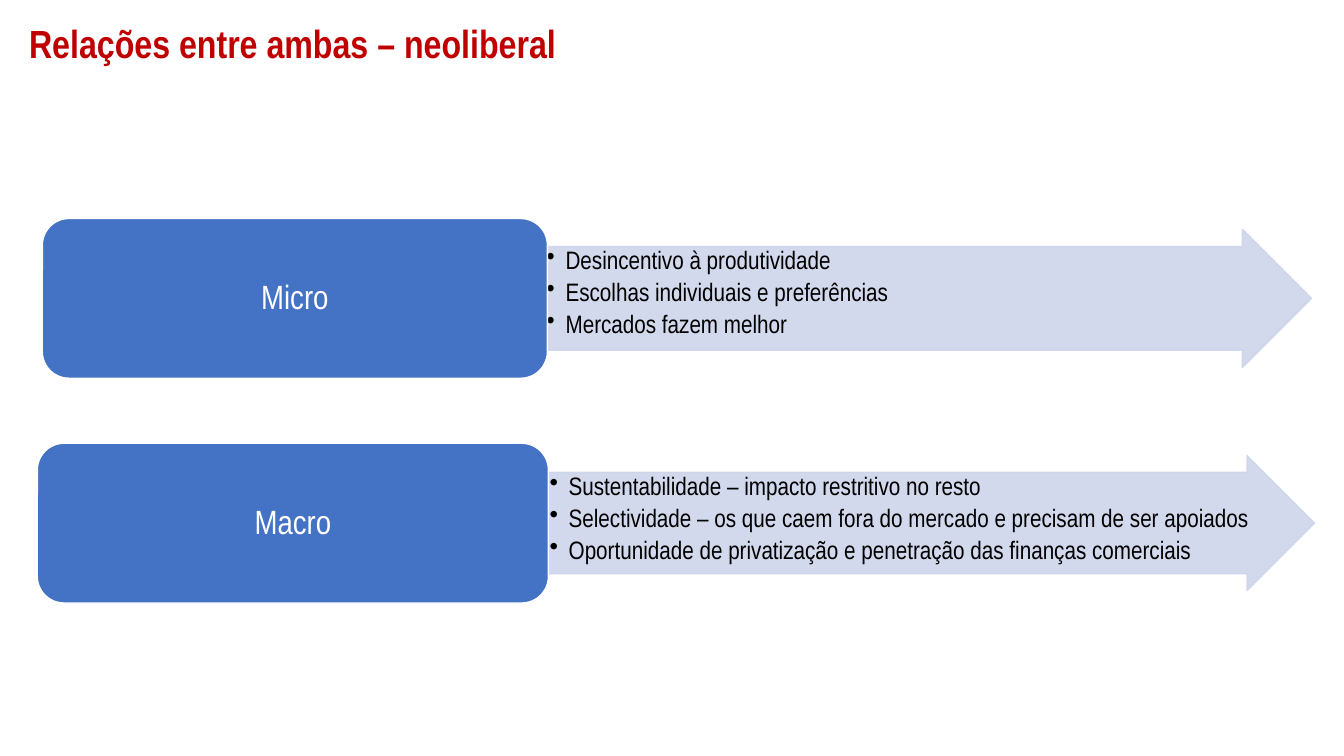
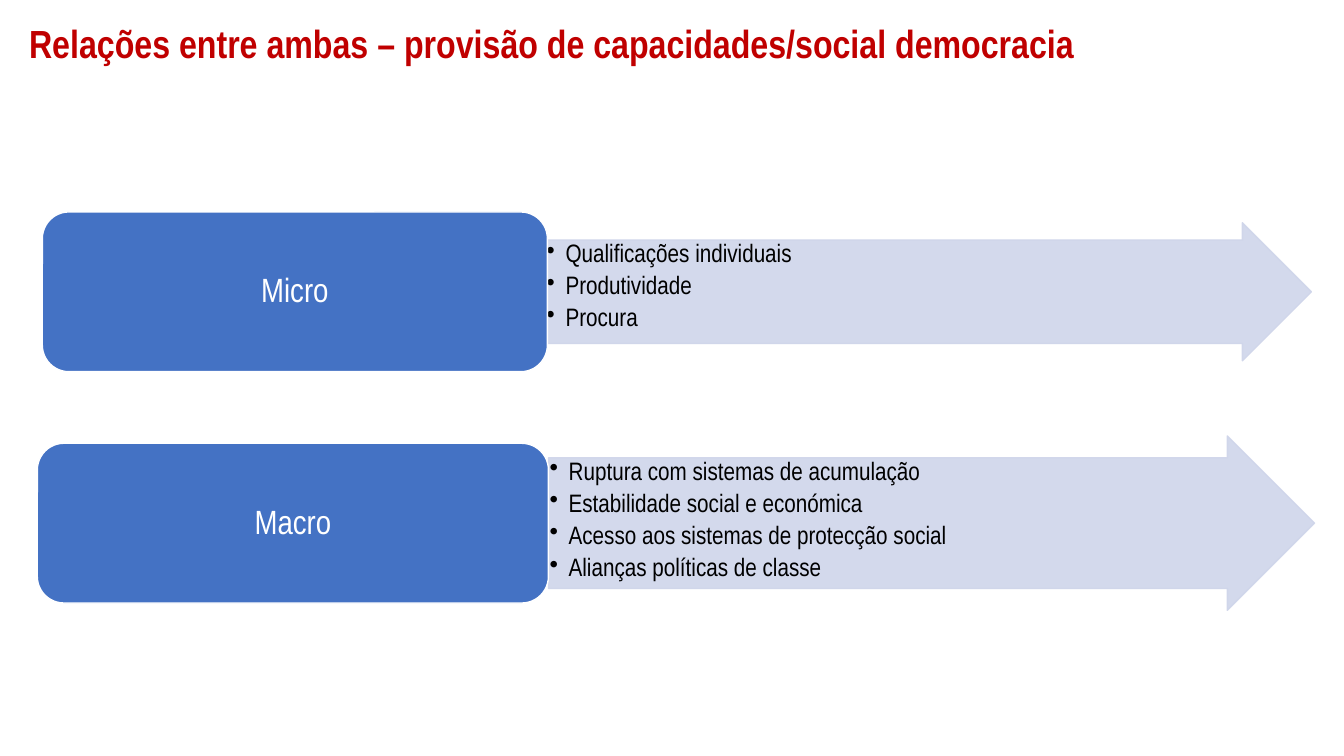
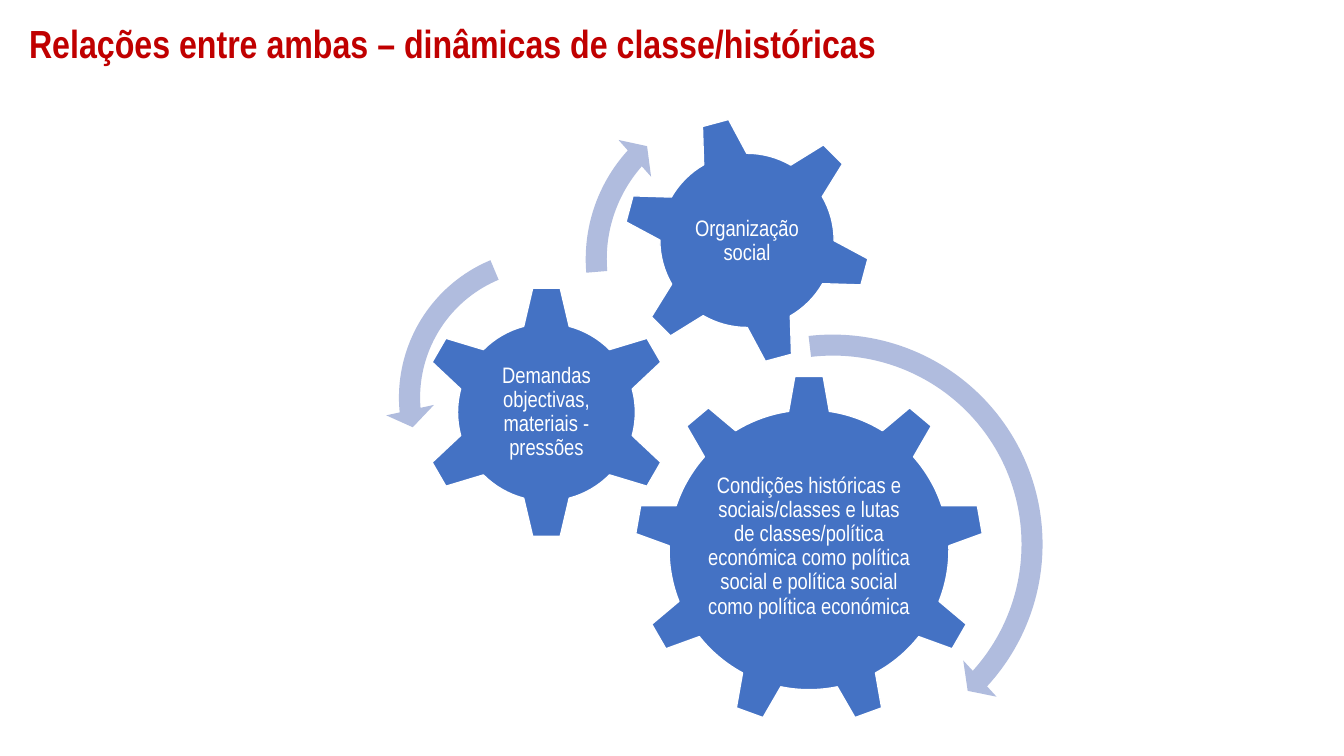
from lxml import etree
from pptx import Presentation
from pptx import util as u
from pptx.dml.color import RGBColor
from pptx.enum import shapes, text
from pptx.oxml.ns import qn

WIDTH, HEIGHT = u.Inches(13.33), u.Inches(7.5)
RATIO = HEIGHT / WIDTH
FONT = "Arial Narrow"
RED = RGBColor(0xC0, 0x00, 0x00)
BLUE = RGBColor(0x44, 0x72, 0xC4)
PALE_BLUE = RGBColor(0xCF, 0xD5, 0xEA)
SOFT_BLUE = RGBColor(0xB0, 0xBC, 0xDE)
WHITE = RGBColor(0xFF, 0xFF, 0xFF)
BLACK = RGBColor(0x00, 0x00, 0x00)
KIND = shapes.MSO_SHAPE
ALIGN = text.PP_ALIGN
ANCHOR = text.MSO_ANCHOR


def add_box(slide, kind, center, middle, width, height, fill=None, line=None):
    """Add a shape, or a text box if kind is None; lengths are percent of the slide."""
    frame = [int(share / 100 * side) for share, side in (
        (center - width / 2, WIDTH), (middle - height / 2, HEIGHT),
        (width, WIDTH), (height, HEIGHT))]
    if kind is None:
        return slide.shapes.add_textbox(*frame)
    shape = slide.shapes.add_shape(kind, *frame)
    shape.shadow.inherit = False
    shape.fill.solid()
    shape.fill.fore_color.rgb = fill
    if line is None:
        shape.line.fill.background()
    else:
        shape.line.color.rgb = line
        shape.line.width = u.Pt(1)
    return shape


def write(shape, lines, size, color, align=ALIGN.CENTER, anchor=ANCHOR.MIDDLE,
          inset=0.02, bold=False, bullets=False):
    frame = shape.text_frame
    frame.text = "\n".join(lines)
    frame.word_wrap = True
    frame.vertical_anchor = anchor
    frame.margin_left = frame.margin_right = u.Inches(inset)
    frame.margin_top = frame.margin_bottom = u.Inches(inset)
    for paragraph in frame.paragraphs:
        paragraph.alignment = align
        paragraph.line_spacing = 0.9
        font = paragraph.runs[0].font
        font.name, font.size, font.bold = FONT, u.Pt(size), bold
        font.color.rgb = color
        if bullets:
            paragraph.space_after = u.Pt(3.5)
            properties = paragraph._p.get_or_add_pPr()
            properties.set("marL", str(u.Inches(0.19)))
            properties.set("indent", str(-u.Inches(0.19)))
            etree.SubElement(properties, qn("a:buChar"), char="•")


presentation = Presentation()
presentation.slide_width, presentation.slide_height = WIDTH, HEIGHT

TITLES = [
    "Relações entre ambas – neoliberal",
    "Relações entre ambas – provisão de capacidades/social democracia",
    "Relações entre ambas – dinâmicas de classe/históricas",
]
for title in TITLES:
    slide = presentation.slides.add_slide(presentation.slide_layouts[6])
    title_box = add_box(slide, None, 50.18, 6, 97.5, 10.13)
    write(title_box, [title], 28, RED, align=ALIGN.LEFT, inset=0.1, bold=True)
neoliberal, democratic, historical = presentation.slides

# Label left and width, arrow left
MICRO = ("Micro", 3.15, 37.58, 40.58)
MACRO = ("Macro", 2.78, 38.03, 40.81)
LABEL_HEIGHT, ARROW_WIDTH = 21.13, 57

# Slide, row, middle of the row, arrow height, points
ROWS = [
    (neoliberal, MICRO, 39.47, 18.27, [
        "Desincentivo à produtividade",
        "Escolhas individuais e preferências",
        "Mercados fazem melhor"]),
    (neoliberal, MACRO, 69.2, 17.87, [
        "Sustentabilidade – impacto restritivo no resto",
        "Selectividade – os que caem fora do mercado e precisam de ser apoiados",
        "Oportunidade de privatização e penetração das finanças comerciais"]),
    (democratic, MICRO, 38.6, 18.27, [
        "Qualificações individuais",
        "Produtividade",
        "Procura"]),
    (democratic, MACRO, 69.2, 23.07, [
        "Ruptura com sistemas de acumulação",
        "Estabilidade social e económica",
        "Acesso aos sistemas de protecção social",
        "Alianças políticas de classe"]),
]
for slide, row, middle, arrow_height, points in ROWS:
    name, label_left, label_width, arrow_left = row
    arrow = add_box(slide, KIND.RIGHT_ARROW, arrow_left + ARROW_WIDTH / 2, middle,
                    ARROW_WIDTH, arrow_height, PALE_BLUE, PALE_BLUE)
    arrow.adjustments[0] = 0.75
    for color in arrow.element.spPr.iter(qn("a:srgbClr")):
        etree.SubElement(color, qn("a:alpha"), val="90000")
    write(arrow, points, 18, BLACK, align=ALIGN.LEFT, anchor=ANCHOR.TOP,
          inset=0.01, bullets=True)
    label = add_box(slide, KIND.ROUNDED_RECTANGLE, label_left + label_width / 2, middle,
                    label_width, LABEL_HEIGHT, BLUE, WHITE)
    write(label, [name], 24, WHITE)

# Kind, center, middle, size, rotation, caption middle, width and height, caption
GEARS = [
    (KIND.GEAR_9, 60.2, 72.73, 46.27, 0, 72.27, 15.6, 23.73,
     "Condições históricas e sociais/classes e lutas de classes/política "
     "económica como política social e política social como política económica"),
    (KIND.GEAR_6, 40.66, 54.53, 33.6, 0, 54.53, 9.38, 16.67,
     "Demandas objectivas, materiais - pressões"),
    (KIND.GEAR_6, 55.58, 31.8, 32.93, 345, 31.87, 10.43, 18.53,
     "Organização social"),
]
for (kind, center, middle, size, rotation,
     caption_middle, caption_width, caption_height, caption) in GEARS:
    gear = add_box(historical, kind, center, middle, size * RATIO, size, BLUE, WHITE)
    gear.rotation = rotation
    caption_box = add_box(historical, None, center, caption_middle,
                          caption_width, caption_height)
    write(caption_box, [caption], 16, WHITE)

# Kind, center, middle, size, band percent, head, end and start degrees, head percent
TURNS = [
    (KIND.CIRCULAR_ARROW, 61.97, 72, 59.2, 4.7, 4.98, 42.41, 263.37, 5.5),
    (KIND.LEFT_CIRCULAR_ARROW, 40.77, 52.6, 43.07, 6.5, 7.17, 174.82, 247.3, 7.5),
    (KIND.CIRCULAR_ARROW, 55.59, 34.27, 46.4, 6, 6.57, 221.9, 175.14, 7),
]
for kind, center, middle, size, band, *angles, head in TURNS:
    turn = add_box(historical, kind, center, middle, size * RATIO, size, SOFT_BLUE)
    values = [band / 100, *(angle * 0.6 for angle in angles), head / 100]
    for index, value in enumerate(values):
        turn.adjustments[index] = value

presentation.save("out.pptx")
